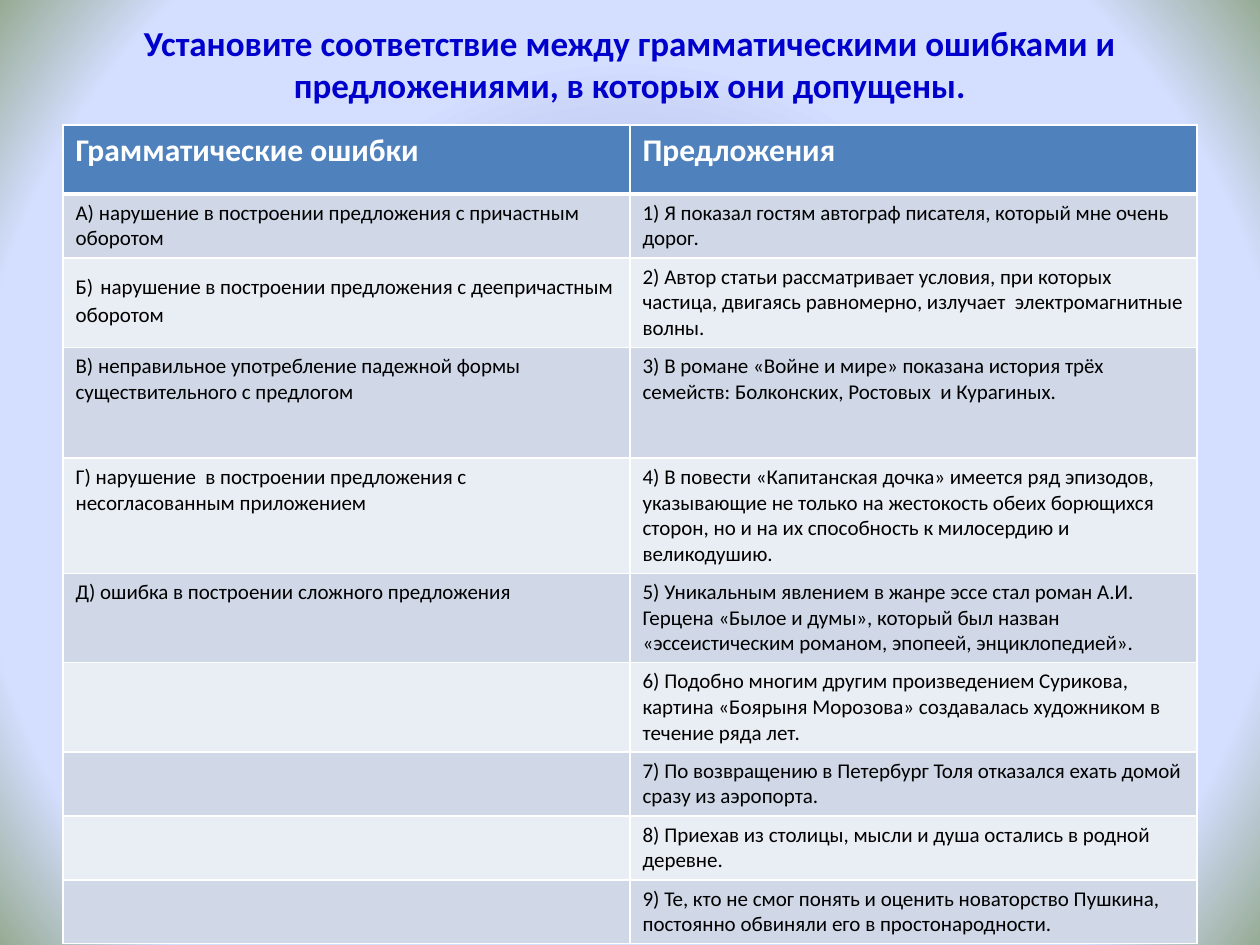
from lxml.etree import SubElement
from pptx import Presentation
from pptx.dml.color import RGBColor
from pptx.enum.text import MSO_ANCHOR, PP_ALIGN
from pptx.oxml import parse_xml
from pptx.oxml.ns import nsdecls, qn
from pptx.util import Inches, Pt

TITLE = ("Установите соответствие между грамматическими ошибками и "
         "предложениями, в которых они допущены.")
HEADERS = ("Грамматические ошибки", "Предложения")
# A cell is a string, or a list of (text, size) runs.
ERRORS = [
    "А) нарушение в построении предложения с причастным оборотом",
    [("Б)", 12), (" ", 18), ("нарушение в построении предложения с деепричастным оборотом", 12)],
    "В) неправильное употребление падежной формы существительного с предлогом",
    "Г) нарушение  в построении предложения с несогласованным приложением",
    "Д) ошибка в построении сложного предложения",
    "", "", "", "",
]
SENTENCES = [
    "1) Я показал гостям автограф писателя, который мне очень дорог.",
    "2) Автор статьи рассматривает условия, при которых частица, двигаясь равномерно, "
    "излучает  электромагнитные волны.",
    "3) В романе «Войне и мире» показана история трёх  семейств: Болконских, Ростовых  и Курагиных.",
    "4) В повести «Капитанская дочка» имеется ряд эпизодов, указывающие не только на жестокость "
    "обеих борющихся сторон, но и на их способность к милосердию и великодушию.",
    "5) Уникальным явлением в жанре эссе стал роман А.И. Герцена «Былое и думы», который был "
    "назван «эссеистическим романом, эпопеей, энциклопедией».",
    "6) Подобно многим другим произведением Сурикова, картина «Боярыня Морозова» создавалась "
    "художником в течение ряда лет.",
    "7) По возвращению в Петербург Толя отказался ехать домой сразу из аэропорта.",
    "8) Приехав из столицы, мысли и душа остались в родной деревне.",
    "9) Те, кто не смог понять и оценить новаторство Пушкина, постоянно обвиняли его "
    "в простонародности.",
]

COLORS = {"title": "0000CC", "header": "4F81BD", "odd": "D0D8E8", "even": "E9EDF4",
          "white": "FFFFFF", "text": "000000"}
# position %, colour, opacity %
BACKGROUND_STOPS = [(0, "8488C4", 72), (53, "D4DEFF", 100), (83, "D4DEFF", 100), (100, "96AB94", 100)]
FONT = "Calibri"
WIDTH, HEIGHT = 10, 7.5
MARGIN = WIDTH / 20
CONTENT_WIDTH = WIDTH - 2 * MARGIN
TITLE_TOP, TABLE_TOP = 0.3, 0.99
HEADER_HEIGHT, ROW_HEIGHT, TALL_ROW_HEIGHT, TALL_ROW = 0.55, 0.41, 0.88, 3


def add_run(paragraph, text, size, color, bold=False):
    run = paragraph.add_run()
    run.text = text
    for name, value in {"name": FONT, "size": Pt(size), "bold": bold}.items():
        setattr(run.font, name, value)
    run.font.color.rgb = RGBColor.from_string(COLORS[color])


def set_background(slide):
    """Fill the slide with a gradient that spreads from its centre."""
    slide.background.fill.solid()
    properties = slide.element.find(".//" + qn("p:bgPr"))
    stops = "".join(
        f'<a:gs pos="{position * 1000}"><a:srgbClr val="{color}">'
        f'<a:alpha val="{opacity * 1000}"/></a:srgbClr></a:gs>'
        for position, color, opacity in BACKGROUND_STOPS)
    properties.replace(properties[0], parse_xml(
        f'<a:gradFill {nsdecls("a")} rotWithShape="1"><a:gsLst>{stops}</a:gsLst>'
        '<a:path path="circle"><a:fillToRect l="50000" t="50000" r="50000" b="50000"/></a:path>'
        '</a:gradFill>'))


def set_borders(cell, bottom_width=1):
    properties = cell._tc.get_or_add_tcPr()
    widths = {"lnL": 1, "lnR": 1, "lnT": 1, "lnB": bottom_width}
    for index, (side, width) in enumerate(widths.items()):
        line = SubElement(properties, qn(f"a:{side}"), w=str(Pt(width)))
        fill = SubElement(line, qn("a:solidFill"))
        SubElement(fill, qn("a:srgbClr"), val=COLORS["white"])
        properties.insert(index, line)


def add_title(slide):
    title = slide.shapes.title
    box = {"left": MARGIN, "top": TITLE_TOP, "width": CONTENT_WIDTH, "height": TABLE_TOP - TITLE_TOP}
    for name, value in box.items():
        setattr(title, name, Inches(value))
    frame = title.text_frame
    frame.word_wrap = True
    frame.vertical_anchor = MSO_ANCHOR.MIDDLE
    frame.margin_bottom = Inches(0.34)
    paragraph = frame.paragraphs[0]
    paragraph.alignment = PP_ALIGN.CENTER
    add_run(paragraph, TITLE, 20, "title", bold=True)


def add_matching_table(slide):
    rows = [HEADERS, *zip(ERRORS, SENTENCES)]
    heights = [HEADER_HEIGHT] + [ROW_HEIGHT] * len(ERRORS)
    heights[TALL_ROW] = TALL_ROW_HEIGHT
    table = slide.shapes.add_table(
        len(rows), len(HEADERS), Inches(MARGIN), Inches(TABLE_TOP),
        Inches(CONTENT_WIDTH), Inches(sum(heights))).table
    for row_index, (contents, height) in enumerate(zip(rows, heights)):
        table.rows[row_index].height = Inches(height)
        is_header = row_index == 0
        fill = "header" if is_header else "odd" if row_index % 2 else "even"
        size, color = (18, "white") if is_header else (12, "text")
        for column_index, content in enumerate(contents):
            cell = table.cell(row_index, column_index)
            cell.fill.solid()
            cell.fill.fore_color.rgb = RGBColor.from_string(COLORS[fill])
            if is_header:
                set_borders(cell, bottom_width=3)
            runs = [(content, size)] if isinstance(content, str) else content
            for text, run_size in runs:
                if text:
                    add_run(cell.text_frame.paragraphs[0], text, run_size, color, is_header)


def main():
    presentation = Presentation()
    presentation.slide_width, presentation.slide_height = Inches(WIDTH), Inches(HEIGHT)
    slide = presentation.slides.add_slide(presentation.slide_layouts[5])
    set_background(slide)
    add_title(slide)
    add_matching_table(slide)
    presentation.save("out.pptx")


if __name__ == "__main__":
    main()
